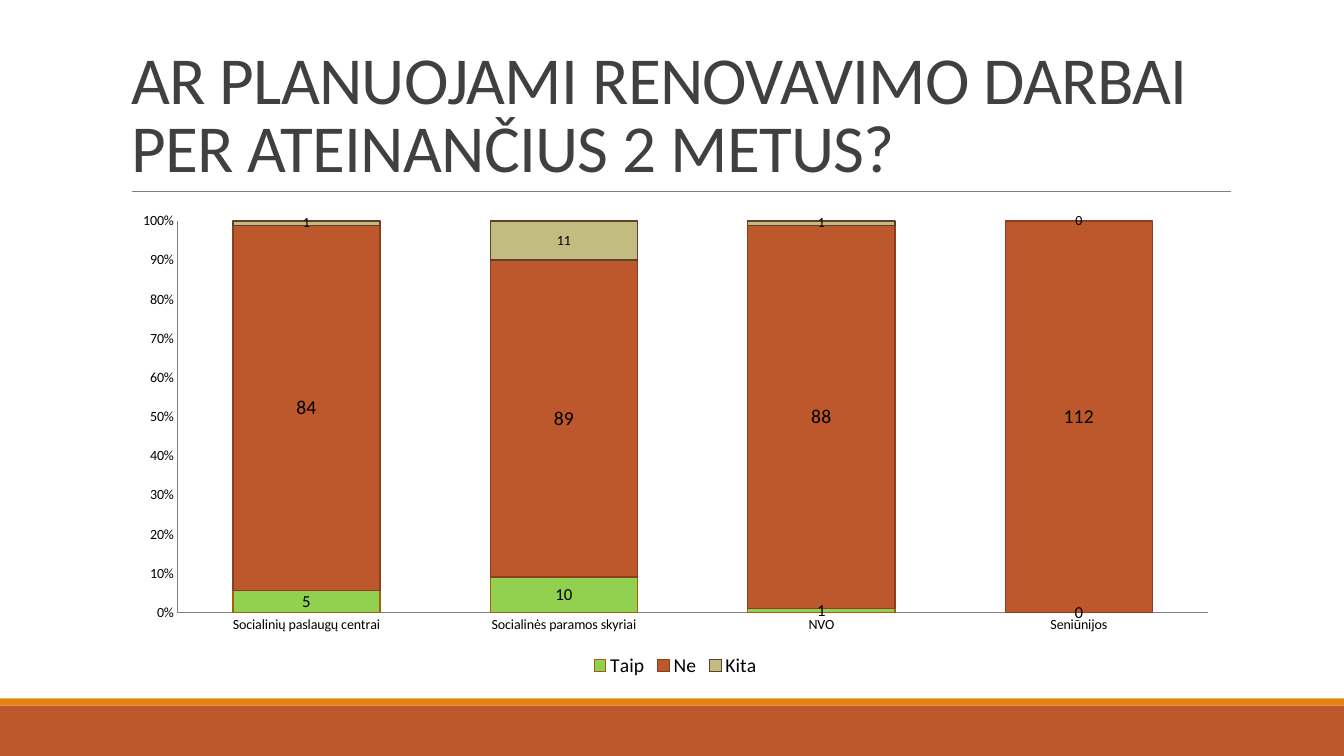
from lxml import etree
from pptx import Presentation
from pptx.chart.data import CategoryChartData
from pptx.dml.color import RGBColor
from pptx.enum.chart import XL_CHART_TYPE, XL_LABEL_POSITION, XL_LEGEND_POSITION, XL_TICK_MARK
from pptx.enum.shapes import MSO_CONNECTOR, MSO_SHAPE
from pptx.enum.text import MSO_ANCHOR, MSO_AUTO_SIZE, PP_ALIGN
from pptx.oxml.ns import qn
from pptx.util import Cm, Pt

STACKED = XL_CHART_TYPE.COLUMN_STACKED_100
CENTER = XL_LABEL_POSITION.CENTER
BOTTOM = XL_LEGEND_POSITION.BOTTOM
NO_TICK = XL_TICK_MARK.NONE
RECTANGLE = MSO_SHAPE.RECTANGLE
STRAIGHT = MSO_CONNECTOR.STRAIGHT

FONT = "Calibri"
CATEGORIES = ["Socialinių paslaugų centrai", "Socialinės paramos skyriai", "NVO", "Seniūnijos"]
# name, values, fill, outline, label size
ANSWERS = [
    ("Taip", (5, 10, 1, 0), "92D050", "A85F0B", 12),
    ("Ne", (84, 89, 88, 112), "BD582C", "8A3F1F", 14),
    ("Kita", (1, 11, 1, 0), "C2BC80", "60402A", 10),
]


def color(value):
    return RGBColor.from_string(value)


def set_font(font, size, value="000000"):
    formats = {"name": FONT, "size": Pt(size), "bold": False}
    for name, setting in formats.items():
        setattr(font, name, setting)
    font.color.rgb = color(value)


presentation = Presentation()
presentation.slide_width = Cm(33.87)
presentation.slide_height = Cm(19.05)
slide = presentation.slides.add_slide(presentation.slide_layouts[5])

# Footer bands
for top, height, fill in [(17.78, 1.27, "BD582C"), (17.6, 0.18, "E48312")]:
    band = slide.shapes.add_shape(RECTANGLE, 0, Cm(top), presentation.slide_width, Cm(height))
    band.shadow.inherit = False
    band.fill.solid()
    band.fill.fore_color.rgb = color(fill)
    band.line.fill.background()

# Rule under the title
rule = slide.shapes.add_connector(STRAIGHT, Cm(3.33), Cm(4.83), Cm(31.01), Cm(4.83))
rule.line.color.rgb = color("808080")
rule.line.width = Pt(0.5)
etree.SubElement(rule._element.spPr, qn("a:effectLst"))

# Title
title = slide.shapes.title
place = {"left": Cm(3.05), "top": Cm(0.79), "width": Cm(27.94), "height": Cm(4.04)}
for name, setting in place.items():
    setattr(title, name, setting)
frame = title.text_frame
frame.text = "AR PLANUOJAMI RENOVAVIMO DARBAI PER ATEINANČIUS 2 METUS?"
frame.word_wrap = True
frame.auto_size = MSO_AUTO_SIZE.NONE
frame.vertical_anchor = MSO_ANCHOR.BOTTOM
paragraph = frame.paragraphs[0]
paragraph.alignment = PP_ALIGN.LEFT
paragraph.line_spacing = 0.85
run = paragraph.runs[0]
set_font(run.font, 48, "404040")
run._r.get_or_add_rPr().set("spc", "-50")

# Chart
chart_data = CategoryChartData()
chart_data.categories = CATEGORIES
for name, values, *_ in ANSWERS:
    chart_data.add_series(name, values)
chart = slide.shapes.add_chart(
    STACKED, Cm(3.05), Cm(5.13), Cm(27.94), Cm(12.04), chart_data
).chart
set_font(chart.font, 10)
chart.has_title = False
chart.has_legend = True
chart.legend.position = BOTTOM
chart.legend.include_in_layout = False
set_font(chart.legend.font, 14)

for axis in (chart.category_axis, chart.value_axis):
    axis.major_tick_mark = NO_TICK
    axis.minor_tick_mark = NO_TICK
    axis.has_major_gridlines = False
    axis.format.line.color.rgb = color("808080")
    axis.format.line.width = Pt(0.75)
value_axis = chart.value_axis
value_axis.minimum_scale = 0
value_axis.maximum_scale = 1
value_axis.major_unit = 0.1
value_axis.tick_labels.number_format = "0%"
value_axis.tick_labels.number_format_is_linked = False

plot = chart.plots[0]
plot.gap_width = 75
plot.overlap = 100
plot.vary_by_categories = False
for series, (_, _, fill, outline, label_size) in zip(plot.series, ANSWERS):
    series.format.fill.solid()
    series.format.fill.fore_color.rgb = color(fill)
    series.format.line.color.rgb = color(outline)
    series.format.line.width = Pt(1)
    labels = series.data_labels
    labels.show_value = True
    labels.position = CENTER
    set_font(labels.font, label_size)

presentation.save("out.pptx")
